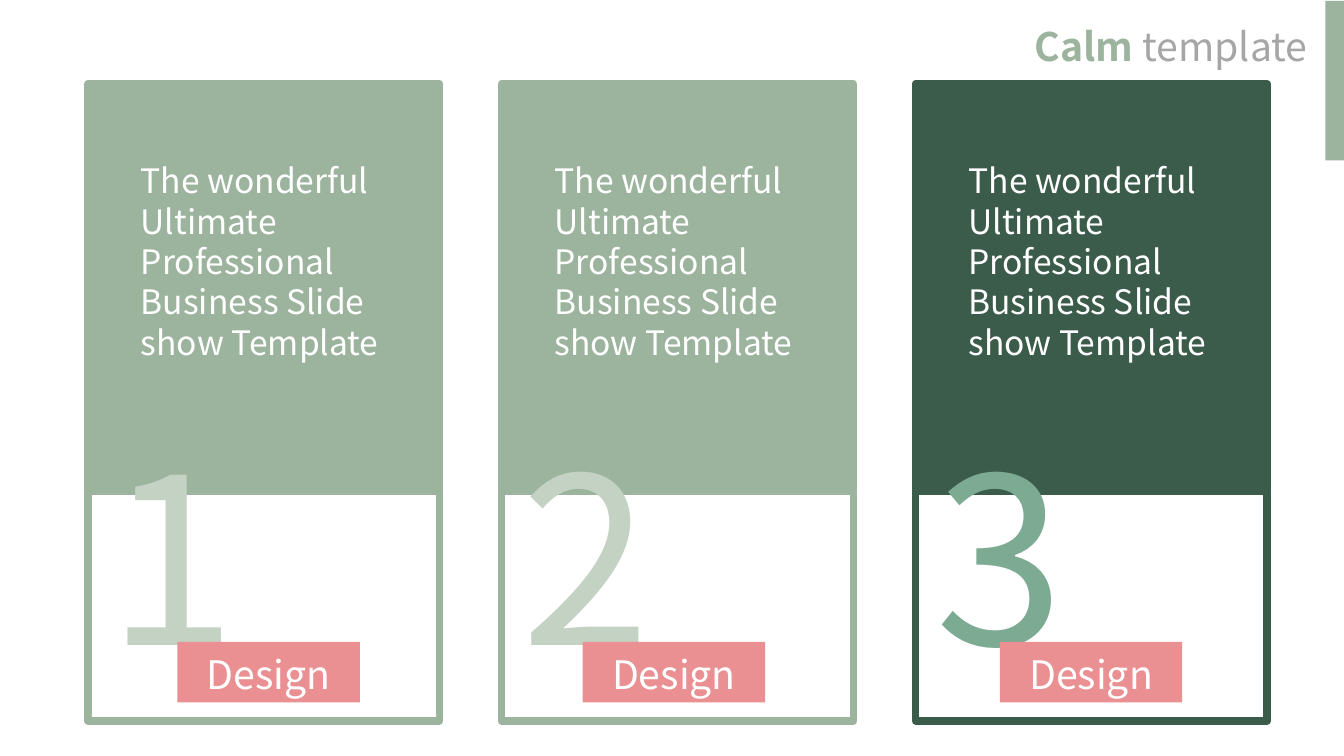
"""Build a slide with three numbered design cards."""
from dataclasses import dataclass

from pptx import Presentation
from pptx.dml.color import RGBColor
from pptx.enum import shapes, text
from pptx.util import Pt

HEADING = [("Calm ", "sage", True), ("template", "grey", False)]
MESSAGE = "The wonderful Ultimate Professional Business Slide show Template"
CARDS = [
    {"number": "1", "panel": "sage", "digit": "mist", "label": "Design", "label_left": 126.7},
    {"number": "2", "panel": "sage", "digit": "mist", "label": "Design", "label_left": 416.2},
    {"number": "3", "panel": "forest", "digit": "jade", "label": "Design", "label_left": 714.2},
]


@dataclass(frozen=True)
class Theme:
    """Colours, font and type sizes."""
    sage: str = "9CB49D"
    forest: str = "3B5B4B"
    mist: str = "C4D2C4"
    jade: str = "7CAA93"
    rose: str = "EA9092"
    grey: str = "A6A6A6"
    white: str = "FFFFFF"
    font: str = "Noto Sans CJK JP"
    heading: float = 28
    body: float = 24
    digit: float = 166
    border: float = 5.5

    def colour(self, name):
        """Return a named colour."""
        return RGBColor.from_string(getattr(self, name))


THEME = Theme()
CARD_LEFT, CARD_PITCH, CARD_WIDTH = 62.7, 295.6, 251.3
PANEL_TOP, PANEL_HEIGHT = 59.8, 289.4
FRAME_TOP, FRAME_HEIGHT = 350.6, 164.2


def add_block(slide, box, fill, border=None):
    """Add a flat rectangle, with a border if named."""
    shape = slide.shapes.add_shape(shapes.MSO_SHAPE.RECTANGLE, *map(Pt, box))
    shape.shadow.inherit = False
    shape.fill.solid()
    shape.fill.fore_color.rgb = THEME.colour(fill)
    if border:
        shape.line.color.rgb = THEME.colour(border)
        shape.line.width = Pt(THEME.border)
    else:
        shape.line.fill.background()
    return shape


def write(shape, runs, *, size, align=text.PP_ALIGN.LEFT, wrap=True, inset_top=3.6):
    """Fill a shape with (wording, colour, bold) runs."""
    frame = shape.text_frame
    frame.word_wrap = wrap
    frame.auto_size = text.MSO_AUTO_SIZE.SHAPE_TO_FIT_TEXT
    frame.vertical_anchor = text.MSO_ANCHOR.TOP
    frame.margin_top = Pt(inset_top)
    paragraph = frame.paragraphs[0]
    paragraph.alignment = align
    for wording, colour, bold in runs:
        run = paragraph.add_run()
        run.text = wording
        run.font.name = THEME.font
        run.font.size = Pt(size)
        run.font.bold = bold
        run.font.color.rgb = THEME.colour(colour)


def add_text(slide, box, runs, **style):
    """Add a text box."""
    write(slide.shapes.add_textbox(*map(Pt, box)), runs, **style)


def add_card(slide, left, card):
    """Add one card: panel, frame, digit, label and message."""
    panel = card["panel"]
    add_block(slide, (left, PANEL_TOP, CARD_WIDTH, PANEL_HEIGHT), panel, panel)
    add_block(slide, (left, FRAME_TOP, CARD_WIDTH, FRAME_HEIGHT), "white", panel)
    add_text(slide, (left + 7, 291.6, 118.8, 208), [(card["number"], card["digit"], False)],
             size=THEME.digit, wrap=False)
    label = add_block(slide, (card["label_left"], 458.6, 130.3, 43.2), "rose")
    write(label, [(card["label"], "white", False)], size=THEME.heading,
          align=text.PP_ALIGN.CENTER, inset_top=5.8)
    add_text(slide, (left + 30.8, 110.9, 190.1, 181.4), [(MESSAGE, "white", False)],
             size=THEME.body)


def main():
    """Build and save the slide."""
    presentation = Presentation()
    presentation.slide_width, presentation.slide_height = Pt(960), Pt(540)
    slide = presentation.slides.add_slide(presentation.slide_layouts[6])
    for index, card in enumerate(CARDS):
        add_card(slide, CARD_LEFT + index * CARD_PITCH, card)
    add_block(slide, (946.8, 0.7, 13.2, 113.8), "sage")
    add_text(slide, (720, 12.2, 221, 41), HEADING, size=THEME.heading,
             align=text.PP_ALIGN.RIGHT, wrap=False)
    presentation.save("out.pptx")


if __name__ == "__main__":
    main()
